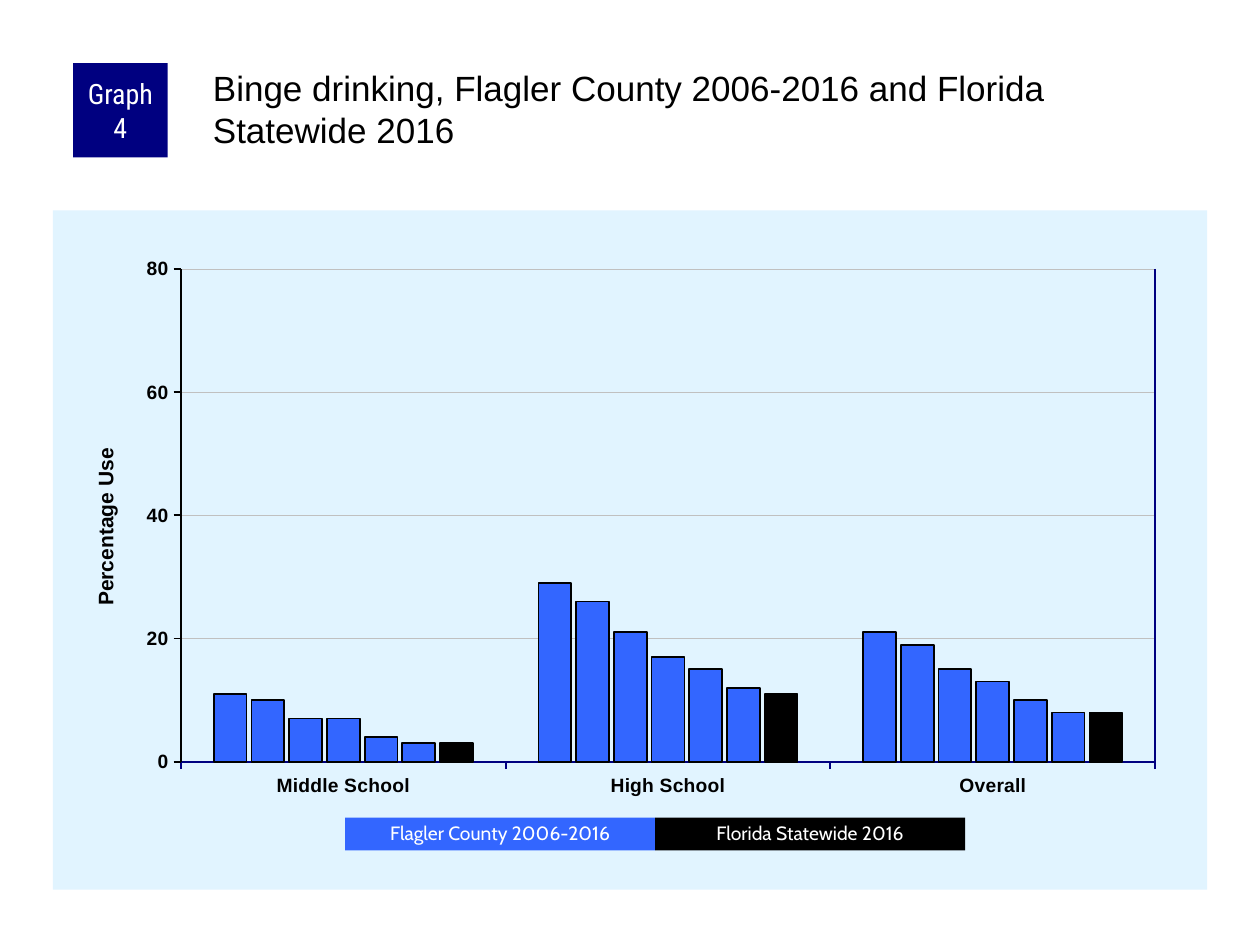
from lxml.etree import SubElement as Sub
from pptx import Presentation
from pptx.chart.data import CategoryChartData as Data
from pptx.dml.color import RGBColor as RGB
from pptx.enum.chart import XL_CHART_TYPE as Kind, XL_TICK_MARK as Tick
from pptx.enum.shapes import MSO_CONNECTOR as Link, MSO_SHAPE as Form
from pptx.enum.text import MSO_ANCHOR as Anchor, PP_ALIGN as Align
from pptx.oxml import parse_xml as parse
from pptx.oxml.ns import nsdecls, qn
from pptx.util import Inches, Pt

HUES = {"navy": "000080", "blue": "3366FF", "black": "000000",
        "white": "FFFFFF", "pale": "E1F4FF", "grey": "C0C0C0"}
TITLE = "Binge drinking, Flagler County 2006-2016 and Florida Statewide 2016"
TAG = "Graph 4"
AXIS = "Percentage Use"
GROUPS = {
    "Middle School": (11, 10, 7, 7, 4, 3, 3),
    "High School": (29, 26, 21, 17, 15, 12, 11),
    "Overall": (21, 19, 15, 13, 10, 8, 8),
}
KEYS = [("Flagler County 2006-2016", "blue"), ("Florida Statewide 2016", "black")]
WIDE, HIGH = 10, 7.5
AREA = (0.42, 1.67, 9.16, 5.39)
PLOT = {"x": 0.111, "y": 0.086, "w": 0.844, "h": 0.726}
KEY = (2.74, 6.49, 2.46, 0.26)


def hue(name):
    return RGB.from_string(HUES[name])


def style(font, size, color="black", face="Arial", bold=False):
    font.size, font.name, font.bold = Pt(size), face, bold
    font.color.rgb = hue(color)


def stroke(line, color, width):
    line.color.rgb, line.width = hue(color), Pt(width)


def write(shape, text, size=11, color="white", face="Cabin", align=Align.CENTER,
          anchor=Anchor.MIDDLE, pads=(0.1, 0.05, 0.1, 0.05), lead=None):
    frame = shape.text_frame
    frame.word_wrap, frame.vertical_anchor = True, anchor
    (frame.margin_left, frame.margin_top,
     frame.margin_right, frame.margin_bottom) = map(Inches, pads)
    para = frame.paragraphs[0]
    para.alignment, para.line_spacing = align, lead
    run = para.add_run()
    run.text = text
    style(run.font, size, color, face)


def block(slide, box, color):
    shape = slide.shapes.add_shape(Form.RECTANGLE, *map(Inches, box))
    shape.shadow.inherit = False
    shape.fill.solid()
    shape.fill.fore_color.rgb = hue(color)
    shape.line.fill.background()
    return shape


def set_axis(axis, color):
    axis.major_tick_mark, axis.minor_tick_mark = Tick.OUTSIDE, Tick.NONE
    style(axis.tick_labels.font, 11, bold=True)
    stroke(axis.format.line, color, 1)


def set_plot(chart):
    root = chart._chartSpace
    area = root.find(".//" + qn("c:plotArea"))
    for old in area.findall(qn("c:layout")):
        area.remove(old)
    layout = parse(f"<c:layout {nsdecls('c')}/>")
    area.insert(0, layout)
    manual = Sub(layout, qn("c:manualLayout"))
    rules = [("layoutTarget", "inner"), ("xMode", "edge"), ("yMode", "edge")]
    for tag, val in rules + list(PLOT.items()):
        Sub(manual, qn("c:" + tag)).set("val", str(val))
    fill = parse(
        f"<c:spPr {nsdecls('c', 'a')}><a:solidFill><a:srgbClr val=\"{HUES['pale']}\"/>"
        "</a:solidFill><a:ln><a:noFill/></a:ln></c:spPr>")
    root.find(qn("c:chart")).addnext(fill)


def add_bars(slide):
    data = Data()
    data.categories = list(GROUPS)
    for num, vals in enumerate(zip(*GROUPS.values()), 1):
        data.add_series(f"Series {num}", vals)
    chart = slide.shapes.add_chart(
        Kind.COLUMN_CLUSTERED, *map(Inches, AREA), data).chart
    style(chart.font, 8)
    chart.has_legend = chart.has_title = False
    plot = chart.plots[0]
    plot.vary_by_categories = False
    plot.gap_width, plot.overlap = 200, -15
    bars = list(plot.series)
    for bar in bars:
        bar.format.fill.solid()
        bar.format.fill.fore_color.rgb = hue("black" if bar is bars[-1] else "blue")
        stroke(bar.format.line, "black", 1)
    set_axis(chart.category_axis, "navy")
    axis = chart.value_axis
    set_axis(axis, "black")
    axis.minimum_scale, axis.maximum_scale, axis.major_unit = 0, 80, 20
    stroke(axis.major_gridlines.format.line, "grey", 0.25)
    frame = axis.axis_title.text_frame
    frame.text = AXIS
    style(frame.paragraphs[0].runs[0].font, 12, bold=True)
    set_plot(chart)


def add_edge(slide):
    left, top, wide, high = AREA
    x = left + wide * (PLOT["x"] + PLOT["w"])
    y = top + high * PLOT["y"]
    ends = (x, y, x, y + high * PLOT["h"])
    edge = slide.shapes.add_connector(Link.STRAIGHT, *map(Inches, ends))
    stroke(edge.line, "navy", 1)
    Sub(edge._element.spPr, qn("a:effectLst"))


def main():
    deck = Presentation()
    deck.slide_width, deck.slide_height = Inches(WIDE), Inches(HIGH)
    slide = deck.slides.add_slide(deck.slide_layouts[5])
    title = slide.shapes.title
    title.left, title.top, title.width, title.height = map(
        Inches, (1.66, 0.5, 7.92, 0.83))
    write(title, TITLE, size=20, color="black", face="Arial", align=Align.LEFT,
          anchor=Anchor.TOP, pads=(0.03, 0.03, 0, 0))
    add_bars(slide)
    add_edge(slide)
    tag = block(slide, (0.58, 0.5, 0.75, 0.75), "navy")
    write(tag, TAG, size=16, face="Roboto Condensed", pads=(0.05, 0, 0.05, 0))
    left, top, wide, high = KEY
    for col, (text, color) in enumerate(KEYS):
        key = block(slide, (left + col * wide, top, wide, high), color)
        write(key, text, lead=0.9)
    deck.save("out.pptx")


if __name__ == "__main__":
    main()
